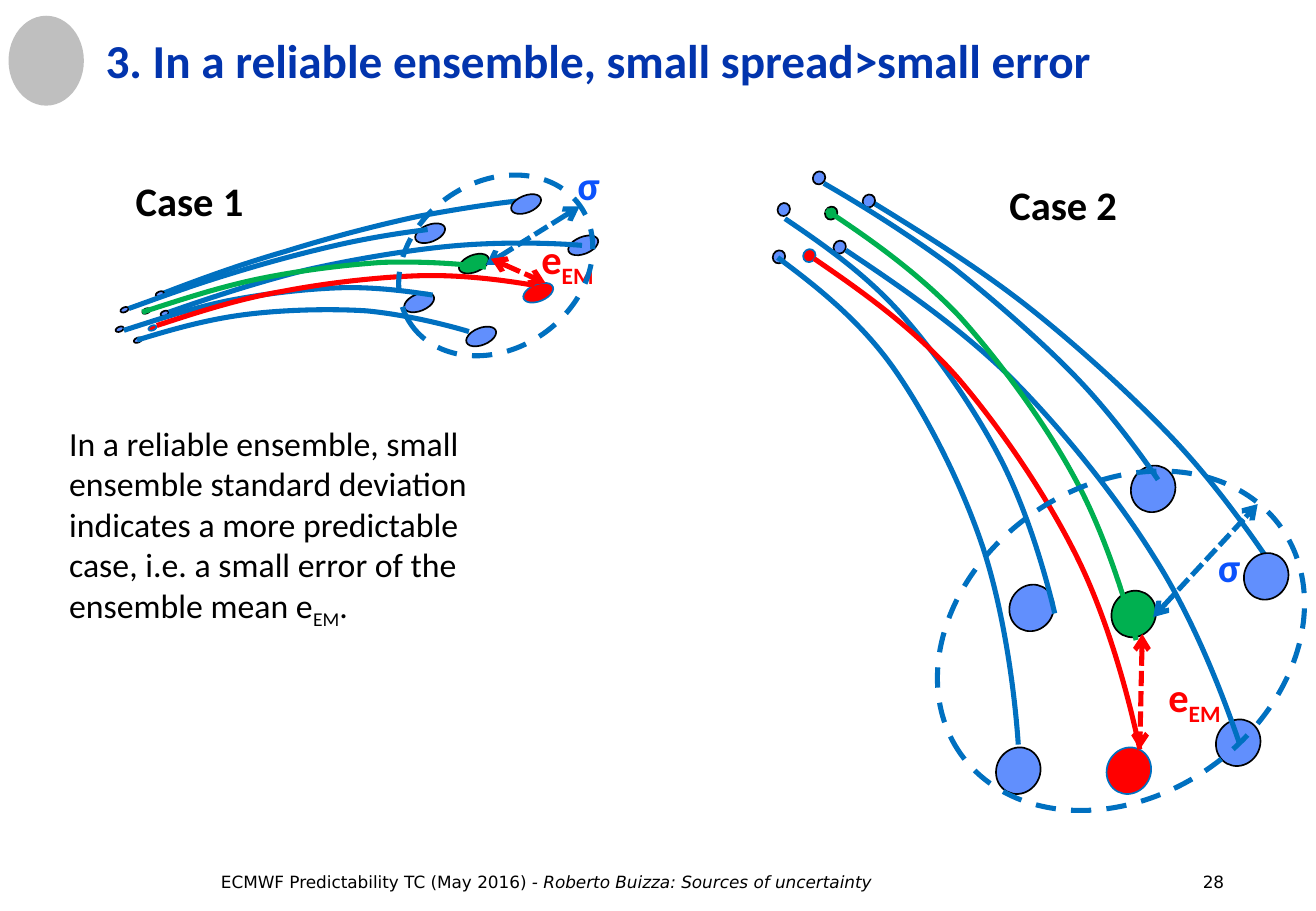
"""Builds a slide comparing small and large ensemble spread."""
from lxml import etree
from pptx import Presentation
from pptx.dml.color import RGBColor
from pptx.enum.dml import MSO_LINE
from pptx.enum.shapes import MSO_CONNECTOR, MSO_SHAPE
from pptx.enum.text import MSO_ANCHOR, MSO_AUTO_SIZE, PP_ALIGN
from pptx.oxml.ns import qn
from pptx.util import Inches, Pt

OVAL = MSO_SHAPE.OVAL
STRAIGHT = MSO_CONNECTOR.STRAIGHT
DASH, SHORT_DASH = MSO_LINE.DASH, MSO_LINE.SQUARE_DOT
LEFT, CENTER = PP_ALIGN.LEFT, PP_ALIGN.CENTER
MIDDLE, TOP = MSO_ANCHOR.MIDDLE, MSO_ANCHOR.TOP
FIT, NO_FIT = MSO_AUTO_SIZE.SHAPE_TO_FIT_TEXT, MSO_AUTO_SIZE.NONE

COLORS = {
    "title": "0234AD", "text": "000000", "sigma": "0B52FC", "member": "618FFD",
    "track": "0070C0", "truth": "FF0000", "control": "00B050", "mark": "BFBFBF",
}
DOT_COLORS = ["member"] * 5 + ["truth", "control"]
TRACK_COLORS = ["track"] * 5 + ["control", "truth"]

CASE_1 = {
    "rot": 338, "end_size": (0.26, 0.14), "start_size": (0.07, 0.04),
    "ends": [(3.41, 1.85), (3.32, 2.42), (3.83, 2.7), (4.67, 1.95),
             (4.2, 1.61), (4.3, 2.34), (3.77, 2.1)],
    "starts": [(0.99, 2.53), (0.95, 2.69), (1.1, 2.78), (1.32, 2.56),
               (1.28, 2.4), (1.22, 2.68), (1.17, 2.54)],
    "tracks": [
        [(1.33, 2.42), (1.64, 2.3), (2, 2.17), (2.35, 2.07), (2.7, 1.96),
         (3.12, 1.85), (3.45, 1.78), (3.77, 1.72), (4.1, 1.67), (4.31, 1.65)],
        [(1.06, 2.54), (1.31, 2.45), (1.61, 2.34), (1.91, 2.25), (2.2, 2.16),
         (2.54, 2.07), (2.81, 2.01), (3.08, 1.95), (3.35, 1.91), (3.52, 1.89)],
        [(1.39, 2.57), (1.73, 2.45), (2.13, 2.32), (2.53, 2.22), (2.93, 2.13),
         (3.41, 2.05), (3.78, 2.02), (4.16, 1.99), (4.55, 2), (4.79, 2.02)],
        [(1.02, 2.72), (1.27, 2.64), (1.57, 2.54), (1.86, 2.48), (2.16, 2.42),
         (2.51, 2.38), (2.79, 2.37), (3.08, 2.36), (3.37, 2.4), (3.56, 2.43)],
        [(1.13, 2.8), (1.39, 2.72), (1.7, 2.63), (2.02, 2.59), (2.33, 2.55),
         (2.72, 2.54), (3.02, 2.56), (3.33, 2.59), (3.66, 2.67), (3.86, 2.73)],
        [(1.17, 2.57), (1.45, 2.48), (1.78, 2.37), (2.11, 2.3), (2.44, 2.23),
         (2.84, 2.18), (3.15, 2.16), (3.46, 2.15), (3.79, 2.17), (4, 2.2)],
        [(1.29, 2.68), (1.6, 2.58), (1.96, 2.46), (2.32, 2.4), (2.68, 2.33),
         (3.12, 2.28), (3.46, 2.27), (3.81, 2.26), (4.17, 2.31), (4.4, 2.35)],
    ],
    "spread": ((4, 2.18), (4.77, 1.7)), "error": ((4.04, 2.13), (4.49, 2.33)),
    "sigma_at": (4.65, 1.27), "error_at": (4.33, 1.88),
    "outline": (3.23, 1.5, 1.7, 1.37), "name": "Case 1", "name_at": (1.01, 1.4),
}
CASE_2 = {
    "rot": 27.9, "end_size": (0.36, 0.39), "start_size": (0.1, 0.11),
    "ends": [(9.31, 3.83), (8.31, 4.81), (8.2, 6.15), (10.01, 5.92),
             (10.24, 4.55), (9.11, 6.15), (9.15, 4.86)],
    "starts": [(6.69, 1.41), (6.4, 1.67), (6.36, 2.06), (6.86, 1.98),
               (7.1, 1.6), (6.61, 2.05), (6.79, 1.7)],
    "tracks": [
        [(7.17, 1.66), (7.56, 1.9), (8.03, 2.19), (8.44, 2.51), (8.86, 2.84),
         (9.32, 3.26), (9.66, 3.62), (9.99, 3.97), (10.29, 4.39), (10.47, 4.66)],
        [(6.78, 1.51), (7.11, 1.7), (7.49, 1.94), (7.84, 2.2), (8.18, 2.47),
         (8.57, 2.81), (8.85, 3.1), (9.13, 3.39), (9.38, 3.73), (9.53, 3.95)],
        [(6.96, 2.06), (7.38, 2.34), (7.88, 2.68), (8.31, 3.1), (8.73, 3.52),
         (9.19, 4.09), (9.5, 4.59), (9.82, 5.09), (10.06, 5.71), (10.2, 6.12)],
        [(6.46, 1.8), (6.77, 2.01), (7.13, 2.26), (7.42, 2.59), (7.72, 2.93),
         (8.03, 3.38), (8.24, 3.79), (8.45, 4.2), (8.6, 4.71), (8.68, 5.05)],
        [(6.4, 2.12), (6.71, 2.35), (7.08, 2.64), (7.36, 3.04), (7.64, 3.44),
         (7.92, 4), (8.09, 4.51), (8.26, 5.03), (8.35, 5.68), (8.38, 6.13)],
        [(6.8, 1.73), (7.15, 1.96), (7.56, 2.25), (7.9, 2.61), (8.23, 2.98),
         (8.59, 3.47), (8.83, 3.91), (9.08, 4.36), (9.25, 4.91), (9.35, 5.27)],
        [(6.7, 2.13), (7.08, 2.39), (7.52, 2.7), (7.88, 3.11), (8.24, 3.53),
         (8.62, 4.09), (8.87, 4.6), (9.12, 5.11), (9.29, 5.74), (9.38, 6.17)],
    ],
    "spread": ((9.49, 5.08), (10.35, 4.15)), "error": ((9.4, 5.22), (9.38, 6.17)),
    "sigma_at": (9.92, 4.41), "error_at": (9.49, 5.48),
    "outline": (7.61, 4, 3.23, 2.55), "name": "Case 2", "name_at": (8.2, 1.43),
}


class Deck:
    """Holds the style and the current slide."""

    def __init__(self, slide, font="Calibri"):
        self.shapes = slide.shapes
        self.font = font

    def color(self, name):
        return RGBColor.from_string(COLORS[name])

    def stroke(self, line, color, width, dash=None):
        line.color.rgb = self.color(color)
        line.width = Pt(width)
        if dash:
            line.dash_style = dash

    def ellipse(self, box, rot=0, fill=None, line=None, width=1, dash=None):
        s = self.shapes.add_shape(OVAL, *map(Inches, box))
        s.rotation = rot
        s.shadow.inherit = False
        if fill:
            s.fill.solid()
            s.fill.fore_color.rgb = self.color(fill)
        else:
            s.fill.background()
        if line:
            self.stroke(s.line, line, width, dash)
        else:
            s.line.fill.background()

    def curve(self, points, color):
        start, *rest = [(Inches(x), Inches(y)) for x, y in points]
        builder = self.shapes.build_freeform(*start, scale=1.0)
        builder.add_line_segments(rest, close=False)
        s = builder.convert_to_shape()
        outline = s._element.find(".//" + qn("a:path"))
        steps = outline.findall(qn("a:lnTo"))
        for first, second, third in zip(steps[::3], steps[1::3], steps[2::3]):
            for step in (second, third):
                first.extend(list(step))
                outline.remove(step)
            first.tag = qn("a:cubicBezTo")
        s.shadow.inherit = False
        s.fill.background()
        self.stroke(s.line, color, 3)

    def arrow(self, ends, color):
        (x1, y1), (x2, y2) = ends
        s = self.shapes.add_connector(STRAIGHT, *map(Inches, (x1, y1, x2, y2)))
        self.stroke(s.line, color, 3, SHORT_DASH)
        for end in ("a:headEnd", "a:tailEnd"):
            etree.SubElement(s.line._ln, qn(end)).set("type", "arrow")
        etree.SubElement(s._element.spPr, qn("a:effectLst"))

    def text(self, box, runs, size, color="text", bold=None, align=LEFT, wrap=True,
             anchor=TOP, fit=FIT, spacing=None, font=None, tab=None):
        sp = self.shapes.add_textbox(*map(Inches, box))
        tf = sp.text_frame
        tf.word_wrap, tf.auto_size, tf.vertical_anchor = wrap, fit, anchor
        p = tf.paragraphs[0]
        p.alignment = align
        if spacing:
            p.line_spacing = Pt(spacing)
        if tab:
            tabs = etree.SubElement(p._p.get_or_add_pPr(), qn("a:tabLst"))
            etree.SubElement(tabs, qn("a:tab"), pos=str(Inches(tab)), algn="l")
        p.font.name, p.font.size, p.font.bold = font or self.font, Pt(size), bold
        p.font.color.rgb = self.color(color)
        for content, style in runs:
            r = p.add_run()
            r.text = content
            if style == "sub":
                r._r.get_or_add_rPr().set("baseline", "-25000")
            elif style == "italic":
                r.font.italic = True

    def label(self, at, width, runs, color="text"):
        self.text((*at, width, 0.5), runs, 24, color, True, CENTER, wrap=False)

    def case(self, case):
        first, *others = zip(case["tracks"], TRACK_COLORS)
        self.curve(*first)
        for group in ("end", "start"):
            for at, fill in zip(case[group + "s"], DOT_COLORS):
                line = "track" if fill == "truth" else "text"
                self.ellipse((*at, *case[group + "_size"]), case["rot"], fill, line)
        for points, color in others:
            self.curve(points, color)
        self.arrow(case["spread"], "track")
        self.arrow(case["error"], "truth")
        self.label(case["sigma_at"], 0.39, [("σ", "")], "sigma")
        self.label(case["error_at"], 0.68, [("e", ""), ("EM", "sub")], "truth")
        self.ellipse(case["outline"], 324.8, line="track", width=3, dash=DASH)
        self.label(case["name_at"], 1.1, [(case["name"], "")])


def main():
    prs = Presentation()
    prs.slide_width, prs.slide_height = Inches(10.83), Inches(7.5)
    deck = Deck(prs.slides.add_slide(prs.slide_layouts[6]))
    deck.text((1.72, 7.13, 9.01, 0.27),
              [("ECMWF Predictability TC (May 2016) ", ""),
               ("- Roberto Buizza: Sources of uncertainty", "italic"), ("\t28", "")],
              10, font="DejaVu Sans", tab=8.08)
    deck.ellipse((0.07, 0.13, 0.62, 0.74), fill="mark")
    deck.text((0.77, 0.17, 9.92, 0.67),
              [("3. In a reliable ensemble, small spread>small error", "")],
              28, "title", True, anchor=MIDDLE, fit=NO_FIT, spacing=32)
    for case in (CASE_1, CASE_2):
        deck.case(case)
    deck.text((0.47, 3.43, 3.54, 1.78),
              [("In a reliable ensemble, small ensemble standard deviation indicates a "
                "more predictable case, i.e. a small error of the ensemble mean e", ""),
               ("EM", "sub"), (".", "")], 20)
    prs.save("out.pptx")


if __name__ == "__main__":
    main()
